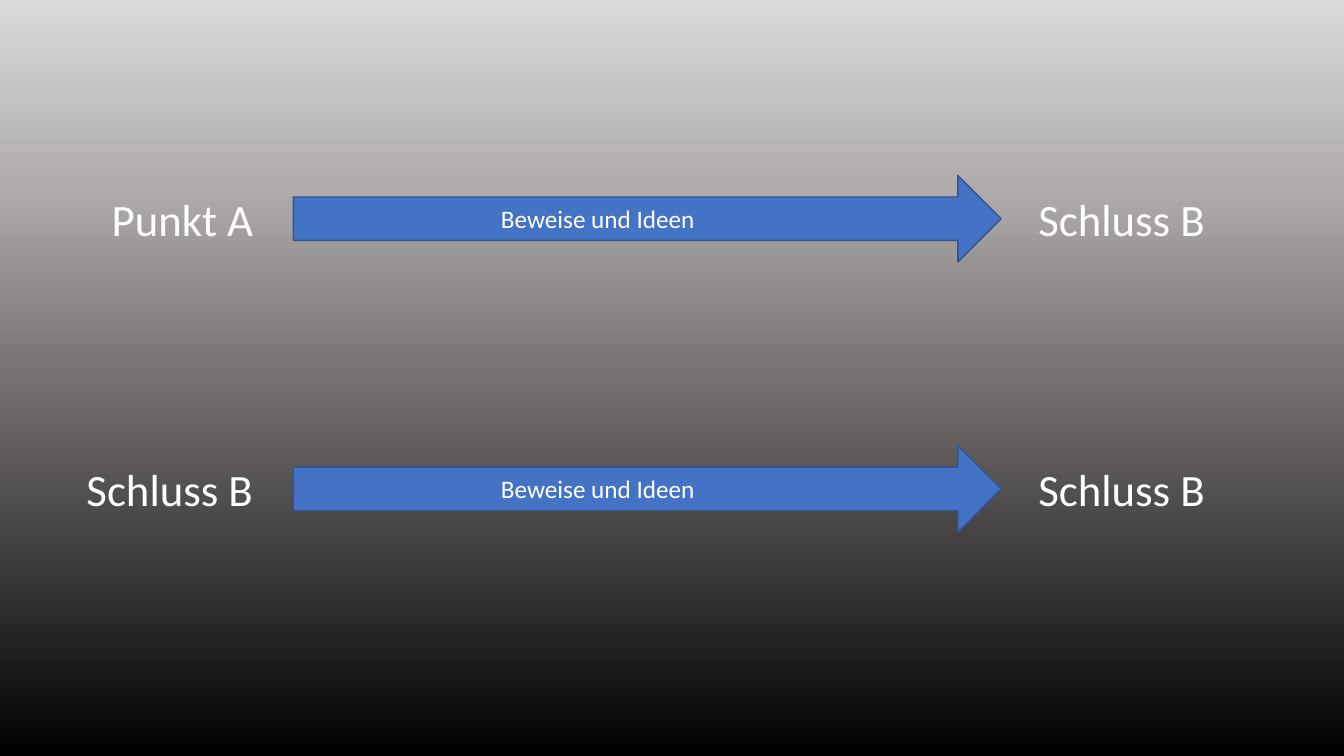
from lxml import etree
from pptx import Presentation, util as u
from pptx.dml.color import RGBColor
from pptx.enum import shapes, text
from pptx.oxml import ns

WHITE = RGBColor(0xFF, 0xFF, 0xFF)
BLUE = RGBColor(0x44, 0x72, 0xC4)
DARK_BLUE = RGBColor(0x32, 0x54, 0x91)
BACKGROUND_STOPS = {
    0: RGBColor(0xD9, 0xD9, 0xD9),
    25: RGBColor(0xAF, 0xAB, 0xAB),
    50: RGBColor(0x76, 0x71, 0x71),
    100: RGBColor(0x00, 0x00, 0x00),
}

FIRST_ROW, ROW_STEP = 1.74, 2.68
ARROW_LEFT, ARROW_WIDTH, ARROW_HEIGHT = 2.91, 7.02, 0.86
START_RIGHT, END_LEFT = 2.63, 10.2
LABEL_WIDTHS = {"Punkt A": 1.62, "Schluss B": 1.87}
ROWS = [("Punkt A", "Schluss B"), ("Schluss B", "Schluss B")]


def add_label(slide, wording, left, top, width, height, size, wrap):
    box = slide.shapes.add_textbox(*map(u.Inches, (left, top, width, height)))
    frame = box.text_frame
    frame.word_wrap = wrap
    frame.auto_size = text.MSO_AUTO_SIZE.SHAPE_TO_FIT_TEXT
    run = frame.paragraphs[0].add_run()
    run.text = wording
    for name, value in {"name": "Calibri", "size": u.Pt(size)}.items():
        setattr(run.font, name, value)
    run.font.color.rgb = WHITE


presentation = Presentation()
presentation.slide_width = u.Inches(13.33)
presentation.slide_height = u.Inches(7.5)
slide = presentation.slides.add_slide(presentation.slide_layouts[6])

background = slide.background.fill
background.gradient()
background.gradient_angle = 270
stop_list = slide.element.find(".//" + ns.qn("a:gsLst"))
for stop in list(stop_list):
    stop_list.remove(stop)
for position, color in BACKGROUND_STOPS.items():
    stop = etree.SubElement(stop_list, ns.qn("a:gs"), pos=str(position * 1000))
    etree.SubElement(stop, ns.qn("a:srgbClr"), val=str(color))

for row, (start, end) in enumerate(ROWS):
    top = FIRST_ROW + row * ROW_STEP
    start_width = LABEL_WIDTHS[start]
    add_label(slide, start, START_RIGHT - start_width, top + 0.11, start_width, 0.64, 32, False)

    arrow = slide.shapes.add_shape(
        shapes.MSO_SHAPE.RIGHT_ARROW,
        *map(u.Inches, (ARROW_LEFT, top, ARROW_WIDTH, ARROW_HEIGHT)),
    )
    arrow.shadow.inherit = False
    arrow.fill.solid()
    arrow.fill.fore_color.rgb = BLUE
    arrow.line.color.rgb = DARK_BLUE
    arrow.line.width = u.Pt(1)

    add_label(slide, "Beweise und Ideen", 4.87, top + 0.23, 4.58, 0.4, 18, True)
    add_label(slide, end, END_LEFT, top + 0.11, LABEL_WIDTHS[end], 0.64, 32, False)

presentation.save("out.pptx")
